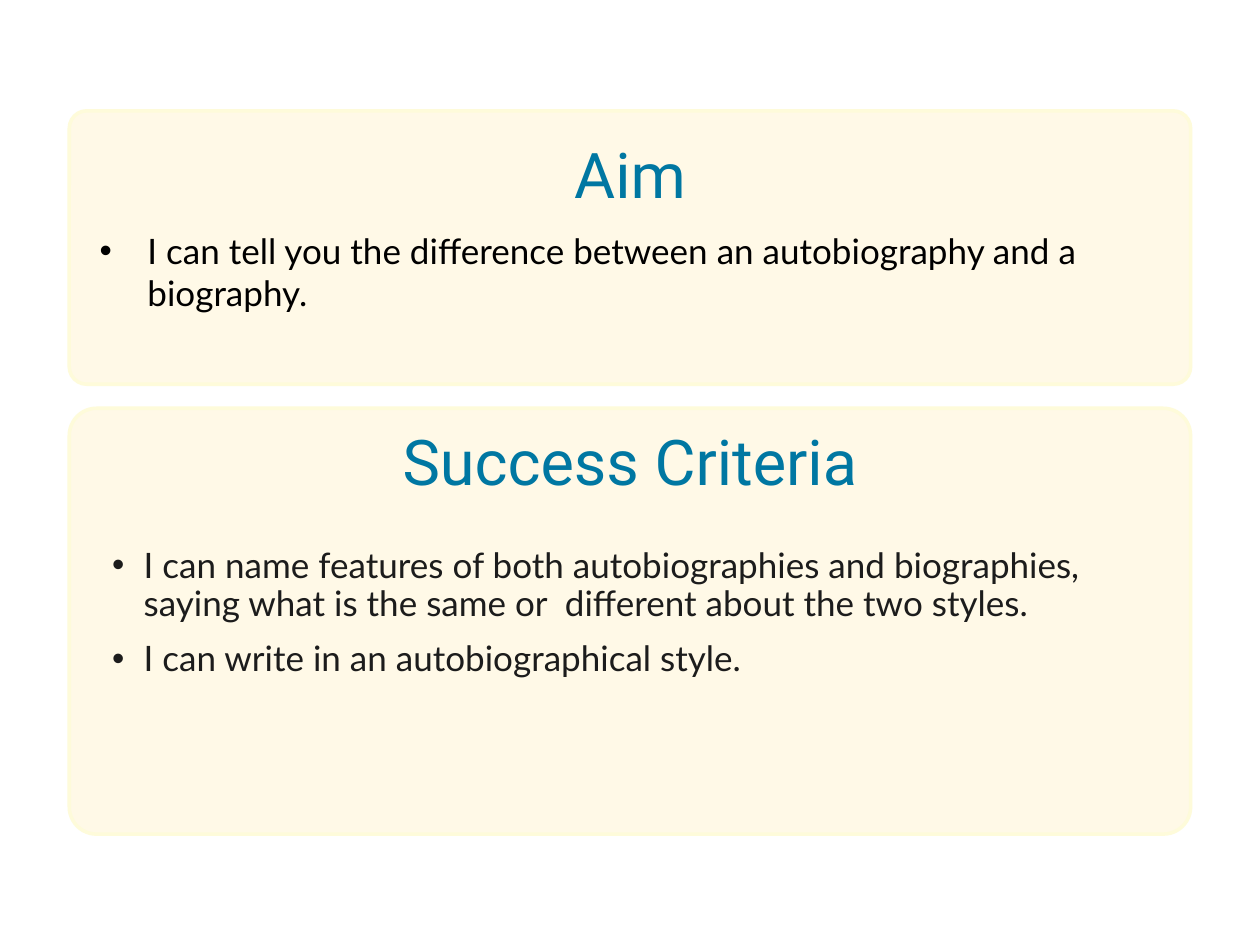
from lxml.etree import SubElement
from pptx import Presentation
from pptx.dml.color import RGBColor
from pptx.enum.shapes import MSO_SHAPE
from pptx.enum.text import MSO_ANCHOR, MSO_AUTO_SIZE, PP_ALIGN
from pptx.oxml.ns import qn
from pptx.util import Inches, Pt

COLORS = {
    "panel": "FFF9E7",
    "border": "FEFBDA",
    "heading": "0077A2",
    "aim": "000000",
    "criteria": "1C1C1C",
}
PANEL_LEFT, PANEL_WIDTH = 0.55, 8.9
TEXT_LEFT, TEXT_WIDTH = 0.69, 8.62
AIM = ["I can tell you the difference between an autobiography and a biography."]
CRITERIA = [
    "I can name features of both autobiographies and biographies, "
    "saying what is the same or  different about the two styles.",
    "I can write in an autobiographical style.",
]


def color(name):
    """Return the named palette colour."""
    return RGBColor.from_string(COLORS[name])


def add_panel(page, top, height):
    """Add a rounded panel behind the placeholders."""
    panel = page.shapes.add_shape(
        MSO_SHAPE.ROUNDED_RECTANGLE,
        Inches(PANEL_LEFT), Inches(top), Inches(PANEL_WIDTH), Inches(height),
    )
    panel.adjustments[0] = 0.064
    panel.shadow.inherit = False
    panel.fill.solid()
    panel.fill.fore_color.rgb = color("panel")
    panel.line.color.rgb = color("border")
    panel.line.width = Pt(2)
    page.shapes._spTree.insert(2, panel._element)


def place_text(box, top, height, insets, anchor):
    """Move a placeholder and set up its text frame."""
    box.left, box.top = Inches(TEXT_LEFT), Inches(top)
    box.width, box.height = Inches(TEXT_WIDTH), Inches(height)
    frame = box.text_frame
    frame.word_wrap = True
    frame.auto_size = MSO_AUTO_SIZE.NONE
    frame.vertical_anchor = anchor
    (frame.margin_left, frame.margin_top,
     frame.margin_right, frame.margin_bottom) = map(Inches, insets)
    return frame


def style_runs(para, font_name, size, color_name):
    """Format every run of a paragraph."""
    for span in para.runs:
        span.font.name = font_name
        span.font.size = Pt(size)
        span.font.bold = False
        span.font.color.rgb = color(color_name)


def fill_heading(box, text, top):
    """Write a centred panel heading."""
    frame = place_text(box, top, 0.59, (0, 0, 0, 0), MSO_ANCHOR.MIDDLE)
    frame.text = text
    para = frame.paragraphs[0]
    para.alignment = PP_ALIGN.CENTER
    para.line_spacing = 0.9
    para.space_before = Pt(0)
    style_runs(para, "Roboto", 36, "heading")


def fill_list(box, items, top, height, insets, indent, spacing, color_name):
    """Write a bulleted list with a hanging indent."""
    frame = place_text(box, top, height, insets, MSO_ANCHOR.TOP)
    frame.text = "\n".join(items)
    for number, para in enumerate(frame.paragraphs):
        props = para._p.get_or_add_pPr()
        props.set("marL", str(Inches(indent)))
        props.set("indent", str(-Inches(indent)))
        SubElement(props, qn("a:buFont"), typeface="Arial")
        SubElement(props, qn("a:buChar"), char="•")
        para.alignment = PP_ALIGN.LEFT
        para.line_spacing = spacing
        para.space_before = Pt(10 if number else 0)
        style_runs(para, "Lato", 20, color_name)


def build_aim(page, heading, body, top):
    """Build the aim panel from its top edge."""
    add_panel(page, top, 2.17)
    fill_heading(heading, "Aim", top + 0.24)
    fill_list(body, AIM, top + 0.89, 0.74, (0.1, 0.05, 0.1, 0.05),
              0.38, 1.0, "aim")


def build_criteria(page, heading, body, top):
    """Build the success criteria panel from its top edge."""
    add_panel(page, top, 3.38)
    fill_heading(heading, "Success Criteria", top + 0.16)
    fill_list(body, CRITERIA, top + 0.83, 2.09, (0.2, 0.28, 0.28, 0.2),
              0.25, 0.9, "criteria")


def main():
    """Build and save the deck."""
    deck = Presentation()
    deck.slide_width, deck.slide_height = Inches(10), Inches(7.5)
    page = deck.slides.add_slide(deck.slide_layouts.get_by_name("Comparison"))
    title, heading, aim_body, spare, criteria_body = page.placeholders
    spare._element.getparent().remove(spare._element)
    build_aim(page, title, aim_body, 0.88)
    build_criteria(page, heading, criteria_body, 3.24)
    deck.save("out.pptx")


if __name__ == "__main__":
    main()
